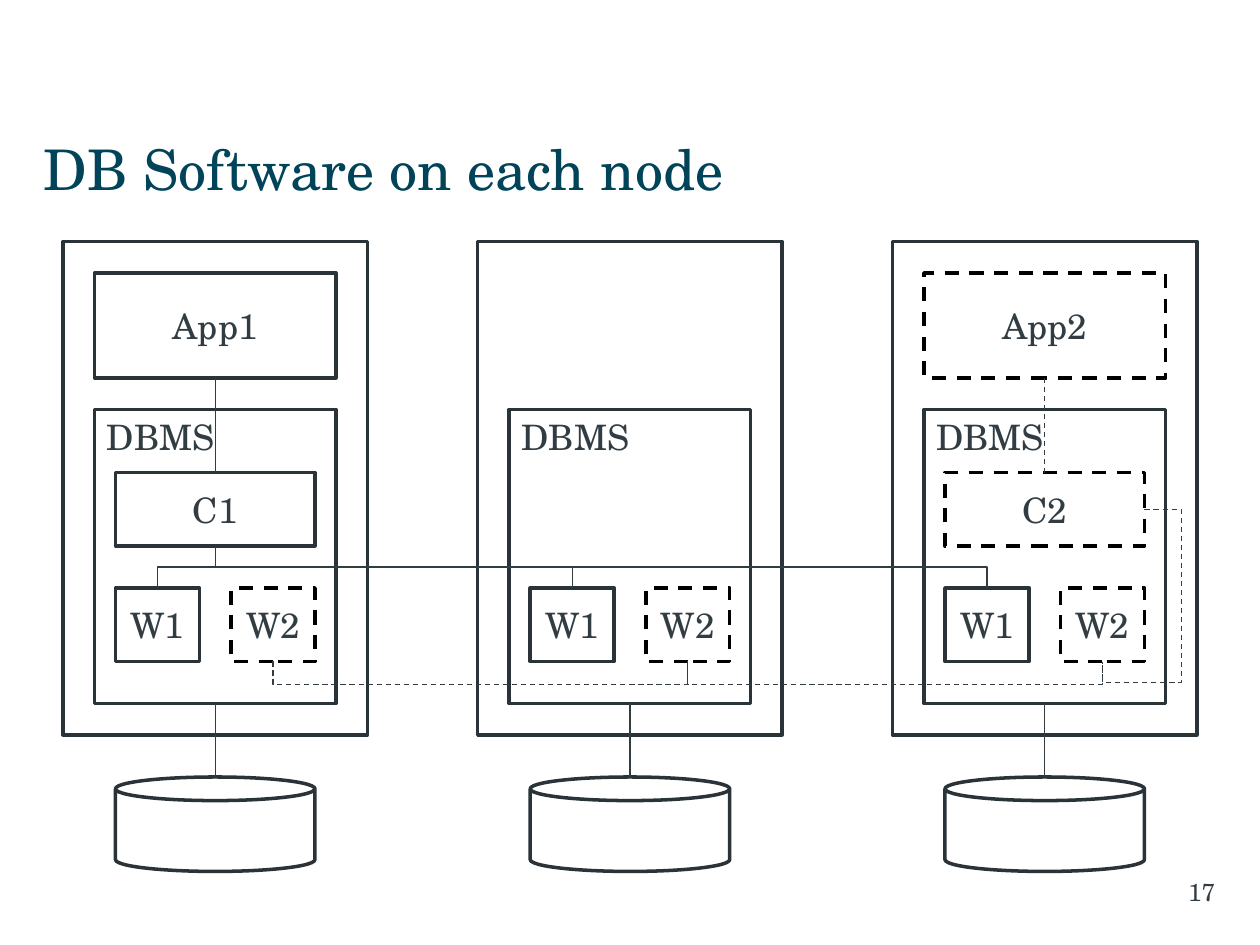
from lxml.etree import SubElement
from pptx import Presentation
from pptx.dml.color import RGBColor
from pptx.enum.dml import MSO_LINE
from pptx.enum.shapes import MSO_CONNECTOR, MSO_SHAPE
from pptx.enum.text import MSO_ANCHOR, PP_ALIGN
from pptx.oxml.ns import qn
from pptx.util import Pt

TITLE = "DB Software on each node"
PAGE = "17"
NODES = [
    {"app": "App1", "coordinator": "C1", "dashed": False},
    {},
    {"app": "App2", "coordinator": "C2", "dashed": True},
]
FONT = "TeX Gyre Schola"
COLORS = {"title": "014359", "text": "323D43", "outline": "293338",
          "dashed": "000000", "fill": "FFFFFF"}
NODE_LEFT, NODE_PITCH = 36, 237
PARTS = {  # offset from node left, top, width, height
    "node": (0, 138, 174, 282),
    "app": (18, 156, 138, 60),
    "dbms": (18, 234, 138, 168),
    "W1": (30, 336, 48, 42),
    "W2": (96, 336, 48, 42),
    "coordinator": (30, 270, 114, 42),
    "disk": (30, 444, 114, 54),
}
TOP, BOTTOM, RIGHT = 0, 2, 3
BUS_DROP, BUS_SIDE, FLAT = 12, 21, 0.13


def write(frame, text, size, color, align, anchor):
    frame.text = text
    frame.word_wrap = True
    frame.vertical_anchor = anchor
    paragraph = frame.paragraphs[0]
    paragraph.alignment = align
    font = paragraph.runs[0].font
    font.name, font.size = FONT, Pt(size)
    font.color.rgb = RGBColor.from_string(COLORS[color])


def add_part(slide, left, part, text="", dashed=False):
    offset, top, width, height = PARTS[part]
    kind = MSO_SHAPE.CAN if part == "disk" else MSO_SHAPE.RECTANGLE
    box = slide.shapes.add_shape(kind, Pt(left + offset), Pt(top), Pt(width), Pt(height))
    box.shadow.inherit = False
    box.fill.solid()
    box.fill.fore_color.rgb = RGBColor.from_string(COLORS["fill"])
    box.line.color.rgb = RGBColor.from_string(COLORS["dashed" if dashed else "outline"])
    box.line.width = Pt(2)
    if dashed:
        box.line.dash_style = MSO_LINE.DASH
    if text:
        corner = part == "dbms"
        write(box.text_frame, text, 20, "text",
              PP_ALIGN.LEFT if corner else PP_ALIGN.CENTER,
              MSO_ANCHOR.TOP if corner else MSO_ANCHOR.MIDDLE)
    return box


def add_link(slide, kind, start, end, dashed=False):
    link = slide.shapes.add_connector(kind, *(Pt(v) for v in (*start, *end)))
    link.line.color.rgb = RGBColor.from_string(COLORS["text"])
    link.line.width = Pt(0.75)
    if dashed:
        link.line.dash_style = MSO_LINE.DASH
    SubElement(link.element.spPr, qn("a:effectLst"))
    return link


def add_elbow(slide, source, side, target, target_side, frame, turn, flip, bends, dashed=False):
    link = add_link(slide, MSO_CONNECTOR.ELBOW, (0, 0), (1, 1), dashed)
    link.begin_connect(source, side)
    link.end_connect(target, target_side)
    link.left, link.top, link.width, link.height = (Pt(v) for v in frame)
    properties = link.element.spPr
    transform = properties.find(qn("a:xfrm"))
    for flag in ("flipH", "flipV"):
        transform.attrib.pop(flag, None)
    if turn:
        transform.set("rot", str(turn * 60000))
    if flip:
        transform.set("flipH", "1")
    geometry = properties.find(qn("a:prstGeom"))
    geometry.set("prst", f"bentConnector{len(bends) + 2}")
    guides = geometry.find(qn("a:avLst"))
    if guides is None:
        guides = SubElement(geometry, qn("a:avLst"))
    for number, bend in enumerate(bends, 1):
        SubElement(guides, qn("a:gd"), name=f"adj{number}", fmla=f"val {round(bend * 100000)}")


def add_vertical_elbow(slide, source, target, target_side, bend, dashed=False):
    x1 = (source.left + source.width / 2) / Pt(1)
    x2 = (target.left + target.width / 2) / Pt(1)
    y1 = (source.top + source.height) / Pt(1)
    y2 = (target.top + (target.height if target_side == BOTTOM else 0)) / Pt(1)
    rise, run = max(y2 - y1, FLAT), abs(x2 - x1)
    frame = ((x1 + x2 - rise) / 2, (y1 + y2 - run) / 2, rise, run)
    rightward = x2 > x1
    add_elbow(slide, source, BOTTOM, target, target_side, frame,
              270 if rightward else 90, rightward, [bend / rise], dashed)


def main():
    """Build the slide showing the database software on each node."""
    deck = Presentation()
    deck.slide_width, deck.slide_height = Pt(720), Pt(540)
    slide = deck.slides.add_slide(deck.slide_layouts[5])

    title = slide.shapes.title
    title.left, title.top, title.width, title.height = Pt(25), Pt(70.5), Pt(669), Pt(51)
    title.text_frame.margin_left = 0
    write(title.text_frame, TITLE, 32, "title", PP_ALIGN.LEFT, MSO_ANCHOR.MIDDLE)

    page = slide.shapes.add_textbox(Pt(556.5), Pt(497.5), Pt(138), Pt(24.5))
    page.text_frame.margin_right = 0
    write(page.text_frame, PAGE, 14, "text", PP_ALIGN.RIGHT, MSO_ANCHOR.TOP)

    built = []
    for index, node in enumerate(NODES):
        left = NODE_LEFT + index * NODE_PITCH
        dashed = node.get("dashed", False)
        labels = {**node, "dbms": "DBMS", "W1": "W1", "W2": "W2", "node": "", "disk": ""}
        built.append({
            part: add_part(slide, left, part, labels[part],
                           part == "W2" or dashed and part in ("app", "coordinator"))
            for part in PARTS if part in labels
        })

    for index, node in enumerate(NODES):
        center = NODE_LEFT + index * NODE_PITCH + PARTS["node"][2] / 2
        add_link(slide, MSO_CONNECTOR.STRAIGHT, (center, 402), (center, 444))
        if node:
            add_link(slide, MSO_CONNECTOR.STRAIGHT, (center, 216), (center, 270), node["dashed"])

    for near, far in zip(built, built[1:]):
        add_vertical_elbow(slide, near["W2"], far["W2"], BOTTOM, BUS_DROP, True)

    coordinator, worker = built[-1]["coordinator"], built[-1]["W2"]
    x1 = (coordinator.left + coordinator.width) / Pt(1)
    y1 = (coordinator.top + coordinator.height / 2) / Pt(1)
    x2 = (worker.left + worker.width / 2) / Pt(1)
    y2 = (worker.top + worker.height) / Pt(1)
    add_elbow(slide, coordinator, RIGHT, worker, BOTTOM, (x2, y1, x1 - x2, y2 - y1), 0, True,
              [-BUS_SIDE / (x1 - x2), 1 + BUS_DROP / (y2 - y1)], True)

    for parts in built:
        add_vertical_elbow(slide, built[0]["coordinator"], parts["W1"], TOP, 12)

    deck.save("out.pptx")


if __name__ == "__main__":
    main()
